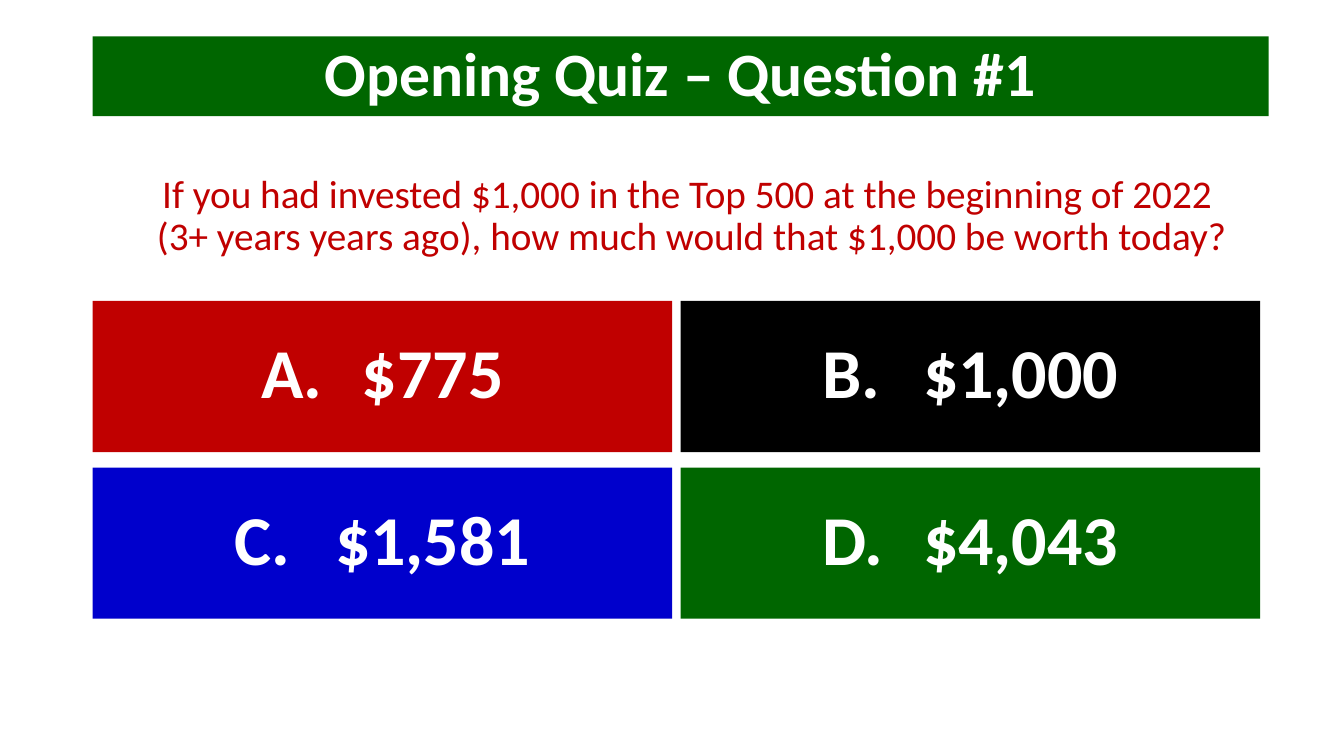
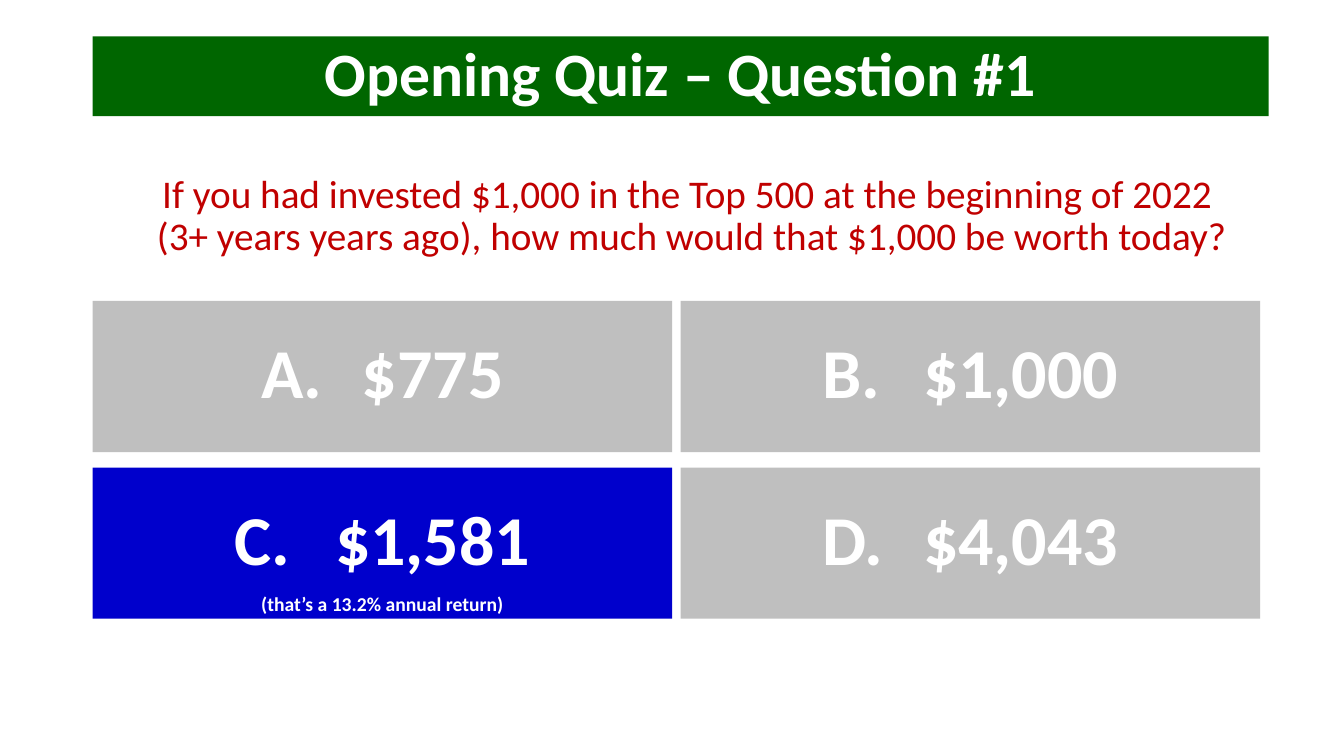
from pptx import Presentation
from pptx.dml.color import RGBColor
from pptx.enum.shapes import MSO_SHAPE
from pptx.enum.text import MSO_ANCHOR, MSO_AUTO_SIZE, PP_ALIGN
from pptx.oxml.ns import qn
from pptx.util import Pt
from lxml.etree import SubElement

HUES = {"green": "006600", "red": "C00000", "blue": "0000CC",
        "black": "000000", "gray": "BFBFBF", "white": "FFFFFF"}
FONT = "Calibri"
LEFT = 66.2
TITLE = "Opening Quiz – Question #1"
ASK = ("If you had invested $1,000 in the Top 500 at the beginning of 2022 \v"
       "(3+ years years ago), how much would that $1,000 be worth today?")
PICKS = [("A", "$775", "red"), ("B", "$1,000", "black"),
         ("C", "$1,581", "blue"), ("D", "$4,043", "green")]
RIGHT = "C"
NOTE = "(that’s a 13.2% annual return)"


def hue(name):
    """Return the named colour."""
    return RGBColor.from_string(HUES[name])


def paint(shape, name):
    """Fill a shape with one colour and drop its outline."""
    shape.fill.solid()
    shape.fill.fore_color.rgb = hue(name)
    shape.line.fill.background()


def style(para, size, color="white", bold=True):
    """Centre a paragraph and set its font."""
    para.alignment = PP_ALIGN.CENTER
    para.line_spacing = 0.9
    for run in para.runs:
        font = run.font
        font.name, font.size, font.bold = FONT, Pt(size), bold
        font.color.rgb = hue(color)


def add_tab(para, pos):
    """Give a paragraph a left tab stop."""
    stops = SubElement(para._p.get_or_add_pPr(), qn("a:tabLst"))
    SubElement(stops, qn("a:tab"), pos=str(Pt(pos)), algn="l")


def add_title(slide):
    """Turn the title placeholder into the green band."""
    band = slide.shapes.title
    band.left, band.top, band.width, band.height = map(Pt, (LEFT, 26, 840, 57))
    paint(band, "green")
    frame = band.text_frame
    frame.text = TITLE
    frame.auto_size = MSO_AUTO_SIZE.NONE
    frame.vertical_anchor = MSO_ANCHOR.MIDDLE
    style(frame.paragraphs[0], 44)


def add_ask(slide):
    """Add the question under the title."""
    box = slide.shapes.add_textbox(*map(Pt, (LEFT, 121, 855.4, 70)))
    frame = box.text_frame
    frame.word_wrap = True
    frame.text = ASK
    style(frame.paragraphs[0], 28, "red", False)


def add_pick(slide, spot, mark, text, color, note):
    """Add one answer tile at its place in the two-column grid."""
    row, col = divmod(spot, 2)
    place = (LEFT + col * 420, 215 + row * 119, 414, 108)
    tile = slide.shapes.add_shape(MSO_SHAPE.RECTANGLE, *map(Pt, place))
    tile.shadow.inherit = False
    paint(tile, color)
    frame = tile.text_frame
    frame.word_wrap = True
    frame.vertical_anchor = MSO_ANCHOR.TOP
    frame.margin_top = Pt(26.8)
    frame.text = f"{mark}.\t{text}"
    para = frame.paragraphs[0]
    style(para, 50)
    add_tab(para, 72)
    if note:
        para = frame.add_paragraph()
        para.text = note
        style(para, 14)
        para.space_before = Pt(10)


def add_quiz(deck, solved):
    """Add the quiz slide, with the answer revealed if solved."""
    slide = deck.slides.add_slide(deck.slide_layouts[5])
    add_title(slide)
    add_ask(slide)
    for spot, (mark, text, color) in enumerate(PICKS):
        hit = solved and mark == RIGHT
        shade = "gray" if solved and not hit else color
        add_pick(slide, spot, mark, text, shade, NOTE if hit else "")


def main():
    """Build and save the deck."""
    deck = Presentation()
    deck.slide_width, deck.slide_height = Pt(960), Pt(540)
    for solved in (False, True):
        add_quiz(deck, solved)
    deck.save("out.pptx")


if __name__ == "__main__":
    main()
